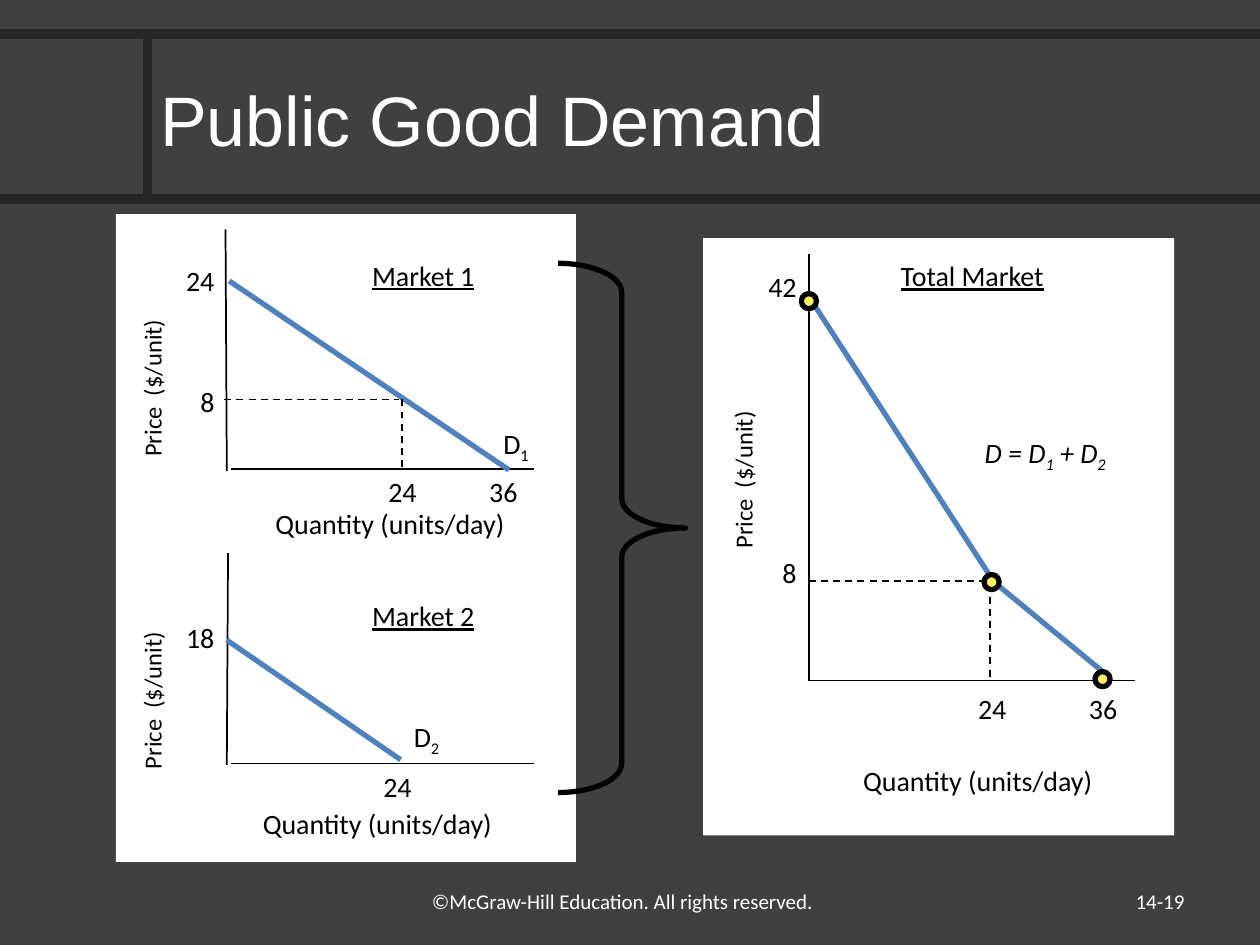
from lxml import etree
from pptx import Presentation
from pptx.dml.color import RGBColor
from pptx.enum.dml import MSO_LINE
from pptx.enum.shapes import MSO_CONNECTOR, MSO_SHAPE
from pptx.enum.text import MSO_ANCHOR, PP_ALIGN
from pptx.oxml.ns import qn
from pptx.util import Emu, Pt

PX = 9144
LEFT, CENTER, RIGHT = PP_ALIGN.LEFT, PP_ALIGN.CENTER, PP_ALIGN.RIGHT
TOP, MIDDLE = MSO_ANCHOR.TOP, MSO_ANCHOR.MIDDLE
STRAIGHT, DASH = MSO_CONNECTOR.STRAIGHT, MSO_LINE.DASH
RECTANGLE, OVAL, BRACE = MSO_SHAPE.RECTANGLE, MSO_SHAPE.OVAL, MSO_SHAPE.RIGHT_BRACE

WHITE, BLACK, BLUE, YELLOW = "FFFFFF", "000000", "4F81BD", "FFF05B"
BACKGROUND, RULE = "404040", "262626"
SLIDE_BOX = (0, 0, 1000, 750)
PRICE, QUANTITY = "Price  ($/unit)", "Quantity (units/day)"


def color(value):
    return RGBColor.from_string(value)


def place(box, area):
    left, top, width, height = area
    return [Emu(value * PX) for value in (box[0] + left, box[1] + top, width, height)]


def format_paragraph(paragraph, size, fill, align, name="Calibri"):
    paragraph.alignment = align
    font = paragraph.font
    font.name, font.size = name, Pt(size)
    font.color.rgb = color(fill)
    return font


def add_text(slide, box, area, *pieces, size=16, fill=BLACK, align=CENTER,
             anchor=TOP, rotation=0, underline=None, italic=None):
    shape = slide.shapes.add_textbox(*place(box, area))
    shape.rotation = rotation
    frame = shape.text_frame
    frame.word_wrap = True
    frame.vertical_anchor = anchor
    paragraph = frame.paragraphs[0]
    font = format_paragraph(paragraph, size, fill, align)
    font.underline, font.italic = underline, italic
    for index, piece in enumerate(pieces):
        run = paragraph.add_run()
        run.text = piece
        if index % 2:
            run.font._element.set("baseline", "-25000")


def add_line(slide, box, start, end, fill=BLACK, width=1, dash=None):
    points = [Emu((box[axis] + point[axis]) * PX) for point in (start, end) for axis in (0, 1)]
    line = slide.shapes.add_connector(STRAIGHT, *points)
    line.line.color.rgb = color(fill)
    line.line.width = Pt(width)
    if dash:
        line.line.dash_style = dash
    etree.SubElement(line._element.spPr, qn("a:effectLst"))


def add_shape(slide, kind, box, area, fill=None, outline=None):
    shape = slide.shapes.add_shape(kind, *place(box, area))
    shape.shadow.inherit = False
    if fill:
        shape.fill.solid()
        shape.fill.fore_color.rgb = color(fill)
    else:
        shape.fill.background()
    if outline:
        shape.line.color.rgb = color(outline)
        shape.line.width = Pt(3)
    else:
        shape.line.fill.background()
    return shape


def draw_header(slide, box):
    for start, end in (((0, 158), (1000, 158)), ((117, 27), (117, 158)), ((0, 27), (1000, 27))):
        add_line(slide, box, start, end, RULE, 5.5)
    title = slide.shapes.title
    title.left, title.top, title.width, title.height = place(box, (117, 30, 883, 128))
    title.text_frame.text = "Public Good Demand"
    title.text_frame.vertical_anchor = MIDDLE
    format_paragraph(title.text_frame.paragraphs[0], 40, WHITE, LEFT, "Arial")


def draw_footer(slide, box):
    add_text(slide, box, (333, 0, 333, 35), "©McGraw-Hill Education. All rights reserved.",
             size=12, fill=WHITE, align=LEFT)
    add_text(slide, box, (717, -5, 233, 40), "14-19", size=12, fill=WHITE,
             align=RIGHT, anchor=MIDDLE)


def draw_market(slide, box, number, baseline, axis, title_top, price_top, quantity,
                demand, demand_label, prices, quantities):
    add_line(slide, box, *axis)
    add_line(slide, box, (91, baseline), (332, baseline))
    add_line(slide, box, *demand, BLUE, 3)
    add_text(slide, box, (177, title_top, 134, 37), f"Market {number}", underline=True)
    add_text(slide, box, (-74, price_top, 206, 34), PRICE, size=14, rotation=270)
    add_text(slide, box, (*quantity, 247, 37), QUANTITY)
    add_text(slide, box, (*demand_label, 71, 37), "D", str(number))
    for value, top in prices:
        add_text(slide, box, (21, top, 67, 37), value, align=RIGHT)
    for value, left in quantities:
        add_text(slide, box, (left, baseline, 73, 37), value)


def draw_markets(slide, box):
    left, top, width, height = box
    add_shape(slide, RECTANGLE, box, (0, 0, width, height), WHITE)
    half = height // 2
    first = (left, top, width, half)
    second = (left, top + half, width, half)
    draw_market(slide, first, 1, 202, ((87, 12), (88, 204)), 30, 121, (94, 227),
                ((90, 53), (312, 203)), (282, 164),
                (("24", 34), ("8", 130)), (("24", 191), ("36", 271)))
    add_line(slide, first, (86, 147), (225, 147), dash=DASH)
    add_line(slide, first, (227, 147), (227, 201), dash=DASH)
    draw_market(slide, second, 2, 179, ((89, 12), (88, 180)), 43, 112, (84, 208),
                ((88, 81), (226, 176)), (211, 139), (("18", 61),), (("24", 187),))


def draw_total(slide, box):
    add_shape(slide, RECTANGLE, box, (0, 0, box[2], box[3]), WHITE)
    add_line(slide, box, (84, 13), (84, 351))
    add_line(slide, box, (83, 351), (343, 351))
    add_text(slide, box, (116, 11, 195, 52), "Total Market", underline=True)
    add_text(slide, box, (-112, 174, 290, 36), PRICE, size=14, rotation=270)
    add_text(slide, box, (85, 412, 266, 52), QUANTITY)
    add_text(slide, box, (181, 152, 181, 52), "D = D", "1", " + D", "2", italic=True)
    for value, top in (("42", 20), ("8", 247)):
        add_text(slide, box, (12, top, 72, 52), value, align=RIGHT)
    for value, left in (("24", 193), ("36", 281)):
        add_text(slide, box, (left, 355, 73, 37), value)
    add_line(slide, box, (84, 272), (231, 272), dash=DASH)
    add_line(slide, box, (228, 348), (228, 272), dash=DASH)

    start, *corners = [(box[0] + x, box[1] + y) for x, y in ((85, 48), (231, 273), (322, 348))]
    builder = slide.shapes.build_freeform(*start, scale=PX)
    builder.add_line_segments(corners, close=False)
    demand = builder.convert_to_shape()
    demand.shadow.inherit = False
    demand.fill.background()
    demand.line.color.rgb = color(BLUE)
    demand.line.width = Pt(3)
    for x, y in ((84, 50), (229, 273), (317, 350)):
        add_shape(slide, OVAL, box, (x - 6, y - 6, 12, 12), YELLOW, BLACK)


def draw_brace(slide, box):
    brace = add_shape(slide, BRACE, box, (0, 0, box[2], box[3]), outline=BLACK)
    brace.adjustments[0] = 0.23
    brace.adjustments[1] = 0.5


def main():
    presentation = Presentation()
    presentation.slide_width, presentation.slide_height = place(SLIDE_BOX, SLIDE_BOX)[2:]
    slide = presentation.slides.add_slide(presentation.slide_layouts[5])
    slide.background.fill.solid()
    slide.background.fill.fore_color.rgb = color(BACKGROUND)
    draw_header(slide, SLIDE_BOX)
    draw_markets(slide, (92, 170, 365, 514))
    draw_total(slide, (558, 189, 374, 474))
    draw_brace(slide, (443, 209, 101, 420))
    draw_footer(slide, (0, 700, 1000, 50))
    presentation.save("out.pptx")


if __name__ == "__main__":
    main()
